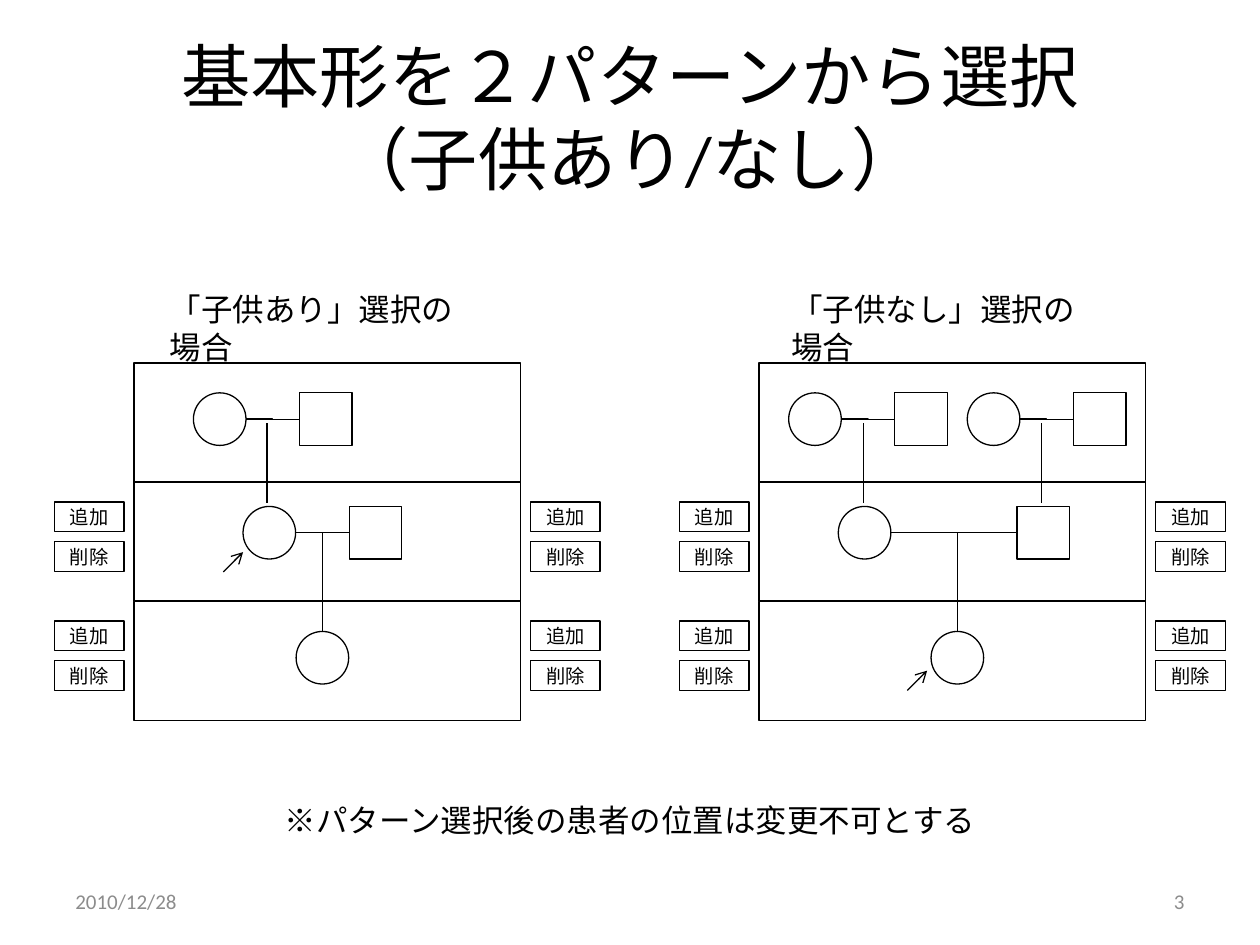
import pptx
import pptx.util
import pptx.dml.color
import pptx.enum.shapes
import pptx.enum.text
import pptx.oxml
from pptx.util import Cm, Pt

SHAPE = pptx.enum.shapes.MSO_SHAPE
CONNECTOR = pptx.enum.shapes.MSO_CONNECTOR
ALIGN = pptx.enum.text.PP_ALIGN
ANCHOR = pptx.enum.text.MSO_ANCHOR

BLACK, GREY = "000000", "8C8C8C"
PANEL_TOP, PANEL_W, ROW_H = 7.32, 7.8, 2.4
PERSON = 1.06
# Top edge of the people in each generation
GENERATION_TOP = [7.92, 10.21, 12.73]


def rgb(value):
    return pptx.dml.color.RGBColor.from_string(value)


def write(tf, lines, size, color=BLACK, align=ALIGN.LEFT, anchor=ANCHOR.MIDDLE):
    """Fill one paragraph, with a line break between lines."""
    tf.word_wrap = True
    tf.vertical_anchor = anchor
    p = tf.paragraphs[0]
    p.alignment = align
    for i, line in enumerate(lines):
        if i:
            p.add_line_break()
        r = p.add_run()
        r.text = line
        r.font.name = "Calibri"
        r.font.size = Pt(size)
        r.font.color.rgb = rgb(color)


def add_text(s, text, x, y, w, h, size, **style):
    sp = s.shapes.add_textbox(Cm(x), Cm(y), Cm(w), Cm(h))
    write(sp.text_frame, [text], size, **style)


def add_outline(s, kind, x, y, w, h):
    sp = s.shapes.add_shape(kind, Cm(x), Cm(y), Cm(w), Cm(h))
    sp.shadow.inherit = False
    sp.fill.background()
    sp.line.color.rgb = rgb(BLACK)
    sp.line.width = Pt(0.75)
    return sp


def add_line(s, x1, y1, x2, y2, kind=CONNECTOR.STRAIGHT, arrow=False):
    cxn = s.shapes.add_connector(kind, Cm(x1), Cm(y1), Cm(x2), Cm(y2))
    cxn.line.color.rgb = rgb(BLACK)
    cxn.line.width = Pt(0.75)
    if arrow:
        ln = cxn.line._get_or_add_ln()
        pptx.oxml.xmlchemy.OxmlElement
        ln.append(pptx.oxml.parse_xml(
            '<a:tailEnd xmlns:a="http://schemas.openxmlformats.org/drawingml/2006/main" type="arrow"/>'))
    cxn._element.spPr.append(pptx.oxml.parse_xml(
        '<a:effectLst xmlns:a="http://schemas.openxmlformats.org/drawingml/2006/main"/>'))
    return cxn


def add_woman(s, x, generation):
    return add_outline(s, SHAPE.OVAL, x, GENERATION_TOP[generation], PERSON, PERSON)


def add_couple(s, woman_x, man_x, generation):
    y = GENERATION_TOP[generation]
    add_woman(s, woman_x, generation)
    man = add_outline(s, SHAPE.RECTANGLE, man_x, y, PERSON, PERSON)
    middle = y + PERSON / 2
    marriage = add_line(s, woman_x + PERSON, middle, man_x, middle, CONNECTOR.ELBOW)
    marriage.end_connect(man, 1)


def add_button(s, text, x, y):
    sp = add_outline(s, SHAPE.RECTANGLE, x, y, 1.4, 0.6)
    tf = sp.text_frame
    tf.margin_left = tf.margin_right = tf.margin_top = tf.margin_bottom = 0
    write(tf, [text], 11, align=ALIGN.CENTER)


def add_panel(s, left):
    """Draw three generation rows, with buttons beside the lower two."""
    for row in range(3):
        top = PANEL_TOP + row * ROW_H
        add_outline(s, SHAPE.RECTANGLE, left, top, PANEL_W, ROW_H)
        if row == 0:
            continue
        for x in (left - 1.6, left + PANEL_W + 0.2):
            add_button(s, "追加", x, top + 0.4)
            add_button(s, "削除", x, top + 1.2)


def add_family(s, left, grandparents, parents, descents, child_x, patient_tip):
    """Draw a family tree; all x values count from the panel's left edge."""
    add_panel(s, left)
    for woman_x, man_x in grandparents:
        add_couple(s, left + woman_x, left + man_x, 0)
    for x in descents:
        add_line(s, left + x, 8.53, left + x, 10.13)
    add_couple(s, left + parents[0], left + parents[1], 1)
    child = add_woman(s, left + child_x, 2)
    child_middle = left + child_x + PERSON / 2
    descent = add_line(s, child_middle, GENERATION_TOP[1] + PERSON / 2,
                       child_middle, GENERATION_TOP[2])
    descent.end_connect(child, 0)
    tip_x, tip_y = left + patient_tip[0], patient_tip[1]
    add_line(s, tip_x - 0.4, tip_y + 0.4, tip_x, tip_y, arrow=True)


def add_title(s, lines):
    sp = s.shapes.title
    sp.left, sp.top, sp.width, sp.height = Cm(1.27), Cm(0.76), Cm(22.86), Cm(3.18)
    write(sp.text_frame, lines, 39.6, align=ALIGN.CENTER)


def main():
    prs = pptx.Presentation()
    prs.slide_width, prs.slide_height = Cm(25.4), Cm(19.05)
    s = prs.slides.add_slide(prs.slide_layouts[5])

    add_title(s, ["基本形を２パターンから選択", "（子供あり/なし）"])
    add_family(s, 2.7, grandparents=[(1.2, 3.34)], parents=(2.2, 4.34),
               descents=[2.68], child_x=3.27, patient_tip=(2.2, 11.13))
    add_family(s, 15.3, grandparents=[(0.6, 2.74), (4.2, 6.34)], parents=(1.6, 5.2),
               descents=[2.1, 5.7], child_x=3.47, patient_tip=(3.39, 13.52))

    for text, x in (("「子供あり」選択の場合", 3.17), ("「子供なし」選択の場合", 15.7)):
        add_text(s, text, x, 5.72, 6.72, 1.02, 18, anchor=ANCHOR.TOP)
    add_text(s, "※パターン選択後の患者の位置は変更不可とする",
             4.7, 15.72, 16, 1.6, 18, align=ALIGN.CENTER)
    add_text(s, "2010/12/28", 1.27, 17.65, 5.92, 1.02, 12, color=GREY)
    add_text(s, "3", 18.21, 17.65, 5.92, 1.02, 12, color=GREY, align=ALIGN.RIGHT)

    prs.save("out.pptx")


if __name__ == "__main__":
    main()
